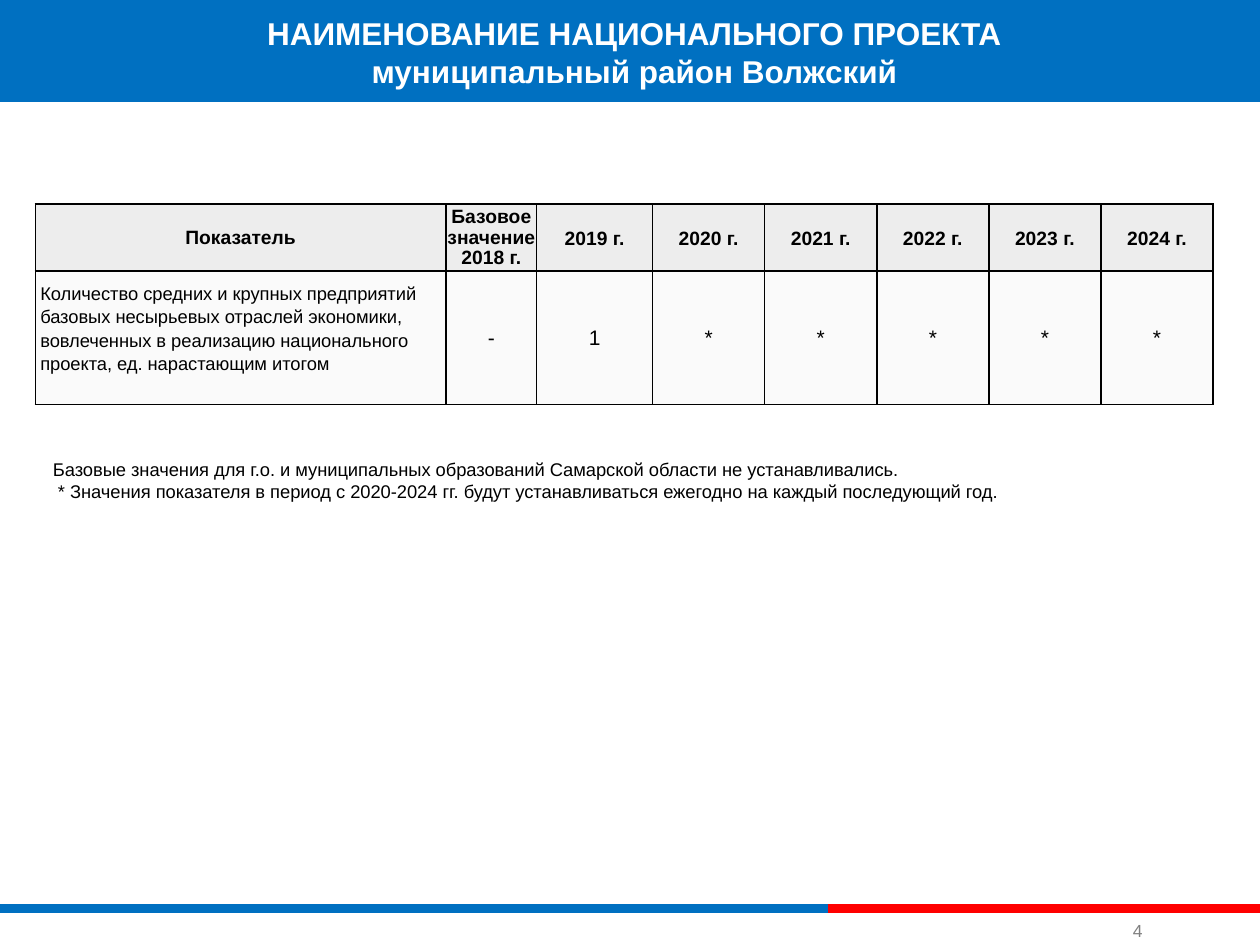
"""Builds the slide with the national project indicator table."""
from lxml import etree
from pptx import Presentation
from pptx.dml.color import RGBColor
from pptx.enum.shapes import MSO_CONNECTOR, MSO_SHAPE
from pptx.enum.text import MSO_ANCHOR, PP_ALIGN
from pptx.oxml.ns import qn
from pptx.util import Inches, Pt

LEFT, CENTER = PP_ALIGN.LEFT, PP_ALIGN.CENTER
TOP, MIDDLE, BOTTOM = MSO_ANCHOR.TOP, MSO_ANCHOR.MIDDLE, MSO_ANCHOR.BOTTOM
FONT = "Arial"
COLORS = {"blue": "0070C1", "red": "FF0000", "white": "FFFFFF", "black": "000000",
          "gray": "808080", "header": "EDEDED", "body": "F2F2F2"}
BODY_OPACITY = 36

TITLE = ["НАИМЕНОВАНИЕ НАЦИОНАЛЬНОГО ПРОЕКТА", "муниципальный район Волжский"]
YEARS = range(2019, 2025)
HEADERS = ["Показатель", "Базовое значение 2018 г."] + [f"{year} г." for year in YEARS]
INDICATOR = ("Количество средних и крупных предприятий базовых несырьевых отраслей "
             "экономики, вовлеченных в реализацию национального проекта, "
             "ед. нарастающим итогом")
VALUES = [INDICATOR, "-", "1"] + ["*"] * 5
NOTES = ["Базовые значения для г.о. и муниципальных образований Самарской области "
         "не устанавливались.",
         " * Значения показателя в период с 2020-2024 гг. будут устанавливаться "
         "ежегодно на каждый последующий год."]
COLUMN_WIDTHS = [3.26, 0.72, 0.92] + [0.89] * 5
ROW_HEIGHTS = [0.53, 1.06]
STRIPES = [(0, 6.57, "blue"), (6.57, 10, "red")]
STRIPE_TOP = 7.21


def color(name):
    return RGBColor.from_string(COLORS[name])


def write_text(frame, lines, size, ink="black", bold=False, align=LEFT, spacing=None):
    for index, line in enumerate(lines):
        paragraph = frame.add_paragraph() if index else frame.paragraphs[0]
        paragraph.alignment = align
        if spacing:
            paragraph.line_spacing = spacing
        run = paragraph.add_run()
        run.text = line
        run.font.name, run.font.size, run.font.bold = FONT, Pt(size), bold
        run.font.color.rgb = color(ink)


def add_text_box(slide, box, lines, size, anchor=TOP, **text_format):
    frame = slide.shapes.add_textbox(*map(Inches, box)).text_frame
    frame.word_wrap = False
    frame.vertical_anchor = anchor
    frame.margin_left = frame.margin_right = Inches(0.05)
    frame.margin_top = frame.margin_bottom = Inches(0.05)
    write_text(frame, lines, size, **text_format)


def add_stripe(slide, start, end, ink):
    stripe = slide.shapes.add_connector(
        MSO_CONNECTOR.STRAIGHT, Inches(start), Inches(STRIPE_TOP),
        Inches(end), Inches(STRIPE_TOP))
    stripe.line.color.rgb = color(ink)
    stripe.line.width = Pt(5)
    etree.SubElement(stripe._element.spPr, qn("a:effectLst"))


def add_borders(cell):
    properties = cell._tc.get_or_add_tcPr()
    for index, side in enumerate(("lnL", "lnR", "lnT", "lnB")):
        border = etree.Element(qn(f"a:{side}"), w=str(Pt(1)))
        fill = etree.SubElement(border, qn("a:solidFill"))
        etree.SubElement(fill, qn("a:srgbClr"), val=COLORS["black"])
        properties.insert(index, border)


def style_cell(cell, fill, side_margin, bottom_margin=0):
    cell.vertical_anchor = MIDDLE
    cell.margin_left = cell.margin_right = Inches(side_margin)
    cell.margin_top, cell.margin_bottom = 0, Inches(bottom_margin)
    cell.fill.solid()
    cell.fill.fore_color.rgb = color(fill)
    add_borders(cell)


def add_indicator_table(slide):
    table = slide.shapes.add_table(
        len(ROW_HEIGHTS), len(COLUMN_WIDTHS), Inches(0.28), Inches(1.62),
        Inches(sum(COLUMN_WIDTHS)), Inches(sum(ROW_HEIGHTS))).table
    table.first_row = table.horz_banding = False
    for column, width in zip(table.columns, COLUMN_WIDTHS):
        column.width = Inches(width)
    for row, height in zip(table.rows, ROW_HEIGHTS):
        row.height = Inches(height)

    for index, (header, value) in enumerate(zip(HEADERS, VALUES)):
        cell = table.cell(0, index)
        style_cell(cell, "header", 0.01)
        write_text(cell.text_frame, [header], 11, bold=True, align=CENTER,
                   spacing=Pt(12) if index < 2 else 1.15)

        cell = table.cell(1, index)
        if index == 0:
            style_cell(cell, "body", 0.04, bottom_margin=0.16)
            write_text(cell.text_frame, [value], 10.5, spacing=1.15)
        else:
            style_cell(cell, "body", 0)
            write_text(cell.text_frame, [value], 12, align=CENTER)
        body_color = cell._tc.tcPr.find(f"{qn('a:solidFill')}/{qn('a:srgbClr')}")
        etree.SubElement(body_color, qn("a:alpha"), val=str(BODY_OPACITY * 1000))


def main():
    presentation = Presentation()
    presentation.slide_width, presentation.slide_height = Inches(10), Inches(7.5)
    slide = presentation.slides.add_slide(presentation.slide_layouts[6])

    for start, end, ink in STRIPES:
        add_stripe(slide, start, end, ink)
    banner = slide.shapes.add_shape(
        MSO_SHAPE.RECTANGLE, Inches(0), Inches(-0.03), Inches(10), Inches(0.84))
    banner.shadow.inherit = False
    banner.fill.solid()
    banner.fill.fore_color.rgb = color("blue")
    banner.line.fill.background()

    add_text_box(slide, (8.94, 7.27, 0.19, 0.25), ["4"], 10, anchor=BOTTOM, ink="gray")
    add_text_box(slide, (1.99, 0.06, 6.09, 0.71), TITLE, 18, ink="white", bold=True,
                 align=CENTER)
    add_indicator_table(slide)
    add_text_box(slide, (0.37, 3.59, 7.8, 0.63), NOTES, 10.5)
    presentation.save("out.pptx")


if __name__ == "__main__":
    main()
